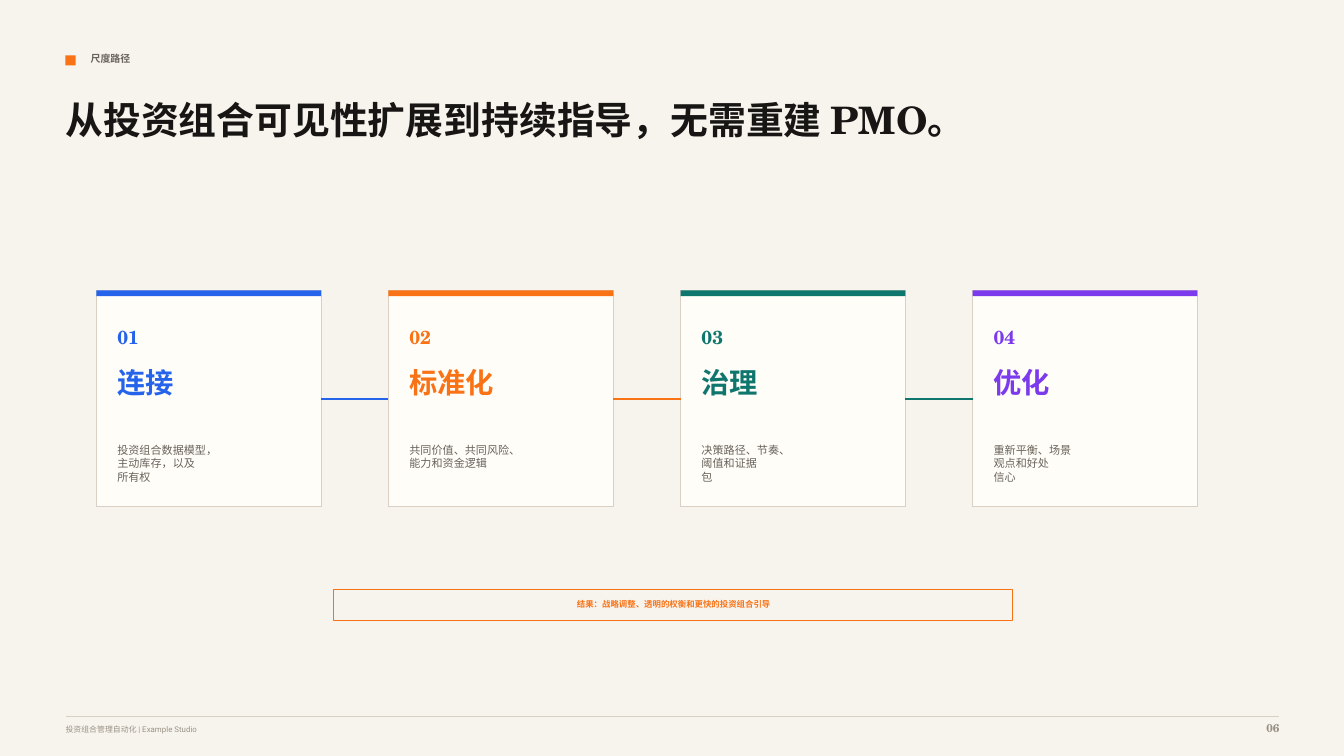
from dataclasses import dataclass

from lxml import etree
from pptx import Presentation
from pptx import util as u
from pptx.dml.color import RGBColor
from pptx.enum import shapes, text
from pptx.oxml.ns import qn


@dataclass(frozen=True)
class Theme:
    paper: str = "F7F4EE"
    card: str = "FFFDF8"
    border: str = "D9D0C3"
    ink: str = "171614"
    body: str = "69635A"
    muted: str = "9A9184"
    blue: str = "2563EB"
    orange: str = "F97316"
    green: str = "0F766E"
    violet: str = "7C3AED"
    sans: str = "Roboto"
    serif: str = "TeX Gyre Schola"
    title_size: float = 27
    stage_size: float = 20.2
    number_size: float = 13.5
    page_size: float = 8.2
    body_size: float = 7.9
    eyebrow_size: float = 7.1
    result_size: float = 6
    footer_size: float = 5.6
    thin: float = 0.75
    thick: float = 1.5


@dataclass(frozen=True)
class Box:
    """A place on the grid: first column, first row, columns, rows."""
    column: float
    row: float
    columns: float
    rows: float


@dataclass(frozen=True)
class Style:
    font: str
    size: float
    color: str
    bold: bool = True
    align: text.PP_ALIGN = text.PP_ALIGN.LEFT


@dataclass(frozen=True)
class Stage:
    name: str
    color: str
    lines: tuple[str, ...]


THEME = Theme()
GRID_COLUMNS, GRID_ROWS = 1333, 750
MARGIN, CONTENT_COLUMNS = 65, 1204
CARD = Box(95.6, 288, 223, 215)
CARD_PITCH = 289.7
CARD_PADDING = 20.8
TOP, LEFT, BOTTOM, RIGHT = range(4)

STAGES = (
    Stage("连接", THEME.blue, ("投资组合数据模型，", "主动库存，以及", "所有权")),
    Stage("标准化", THEME.orange, ("共同价值、共同风险、", "能力和资金逻辑")),
    Stage("治理", THEME.green, ("决策路径、节奏、", "阈值和证据", "包")),
    Stage("优化", THEME.violet, ("重新平衡、场景", "观点和好处", "信心")),
)

presentation = Presentation()
presentation.slide_width = u.Inches(13.33)
presentation.slide_height = u.Inches(7.5)
slide = presentation.slides.add_slide(presentation.slide_layouts[6])


def across(columns: float) -> int:
    return round(presentation.slide_width * columns / GRID_COLUMNS)


def down(rows: float) -> int:
    return round(presentation.slide_height * rows / GRID_ROWS)


def place(box: Box) -> tuple[int, int, int, int]:
    return across(box.column), down(box.row), across(box.columns), down(box.rows)


def add_box(box: Box, fill: str | None = None, line: str | None = None):
    shape = slide.shapes.add_shape(shapes.MSO_SHAPE.RECTANGLE, *place(box))
    shape.shadow.inherit = False
    if fill:
        shape.fill.solid()
        shape.fill.fore_color.rgb = RGBColor.from_string(fill)
    else:
        shape.fill.background()
    if line:
        shape.line.color.rgb = RGBColor.from_string(line)
        shape.line.width = u.Pt(THEME.thin)
    else:
        shape.line.fill.background()
    return shape


def add_text(box: Box, style: Style, *lines: str) -> None:
    frame = slide.shapes.add_textbox(*place(box)).text_frame
    frame.word_wrap = True
    frame.margin_left = frame.margin_top = frame.margin_right = frame.margin_bottom = 0
    frame.text = "\n".join(lines)
    for paragraph in frame.paragraphs:
        paragraph.alignment = style.align
        paragraph.font.name = style.font
        paragraph.font.size = u.Pt(style.size)
        paragraph.font.bold = style.bold
        paragraph.font.color.rgb = RGBColor.from_string(style.color)


def add_line(start: float, end: float, row: float, color: str, width: float):
    connector = slide.shapes.add_connector(
        shapes.MSO_CONNECTOR.STRAIGHT, across(start), down(row), across(end), down(row))
    connector.line.color.rgb = RGBColor.from_string(color)
    connector.line.width = u.Pt(width)
    etree.SubElement(connector._element.spPr, qn("a:effectLst"))
    return connector


def add_card(index: int, stage: Stage):
    column = CARD.column + index * CARD_PITCH
    inner = column + CARD_PADDING
    card = add_box(Box(column, CARD.row, CARD.columns, CARD.rows), THEME.card, THEME.border)
    add_box(Box(column, CARD.row, CARD.columns, 6), stage.color)
    add_text(Box(inner, 323, 46, 25),
             Style(THEME.serif, THEME.number_size, stage.color), f"{index + 1:02}")
    add_text(Box(inner, 362, 167, 46),
             Style(THEME.serif, THEME.stage_size, stage.color), stage.name)
    add_text(Box(inner, 440, 173, 46),
             Style(THEME.sans, THEME.body_size, THEME.body, bold=False), *stage.lines)
    return card


# Background and heading
slide.background.fill.solid()
slide.background.fill.fore_color.rgb = RGBColor.from_string(THEME.paper)
add_box(Box(MARGIN, 55, 10, 10), THEME.orange)
add_text(Box(90, 52, 583, 19), Style(THEME.sans, THEME.eyebrow_size, THEME.body), "尺度路径")
add_text(Box(MARGIN, 96, 990, 102), Style(THEME.serif, THEME.title_size, THEME.ink),
         "从投资组合可见性扩展到持续指导，无需重建 PMO。")

# Stage cards, each joined to the next
cards = [add_card(index, stage) for index, stage in enumerate(STAGES)]
for index, (card, following) in enumerate(zip(cards, cards[1:])):
    start = CARD.column + index * CARD_PITCH + CARD.columns
    link = add_line(start, start + CARD_PITCH - CARD.columns, CARD.row + CARD.rows / 2,
                    STAGES[index].color, THEME.thick)
    link.begin_connect(card, RIGHT)
    link.end_connect(following, LEFT)

# Result
add_box(Box(331, 585, 673, 31), line=THEME.orange)
add_text(Box(344, 594, 648, 14),
         Style(THEME.sans, THEME.result_size, THEME.orange, align=text.PP_ALIGN.CENTER),
         "结果：战略调整、透明的权衡和更快的投资组合引导")

# Footer
add_line(MARGIN, MARGIN + CONTENT_COLUMNS, 710.5, THEME.border, THEME.thin)
add_text(Box(MARGIN, 719, 792, 15),
         Style(THEME.sans, THEME.footer_size, THEME.muted, bold=False),
         "投资组合管理自动化 | Example Studio")
add_text(Box(1219, 715, 50, 19),
         Style(THEME.serif, THEME.page_size, THEME.muted, align=text.PP_ALIGN.RIGHT), "06")

presentation.save("out.pptx")
